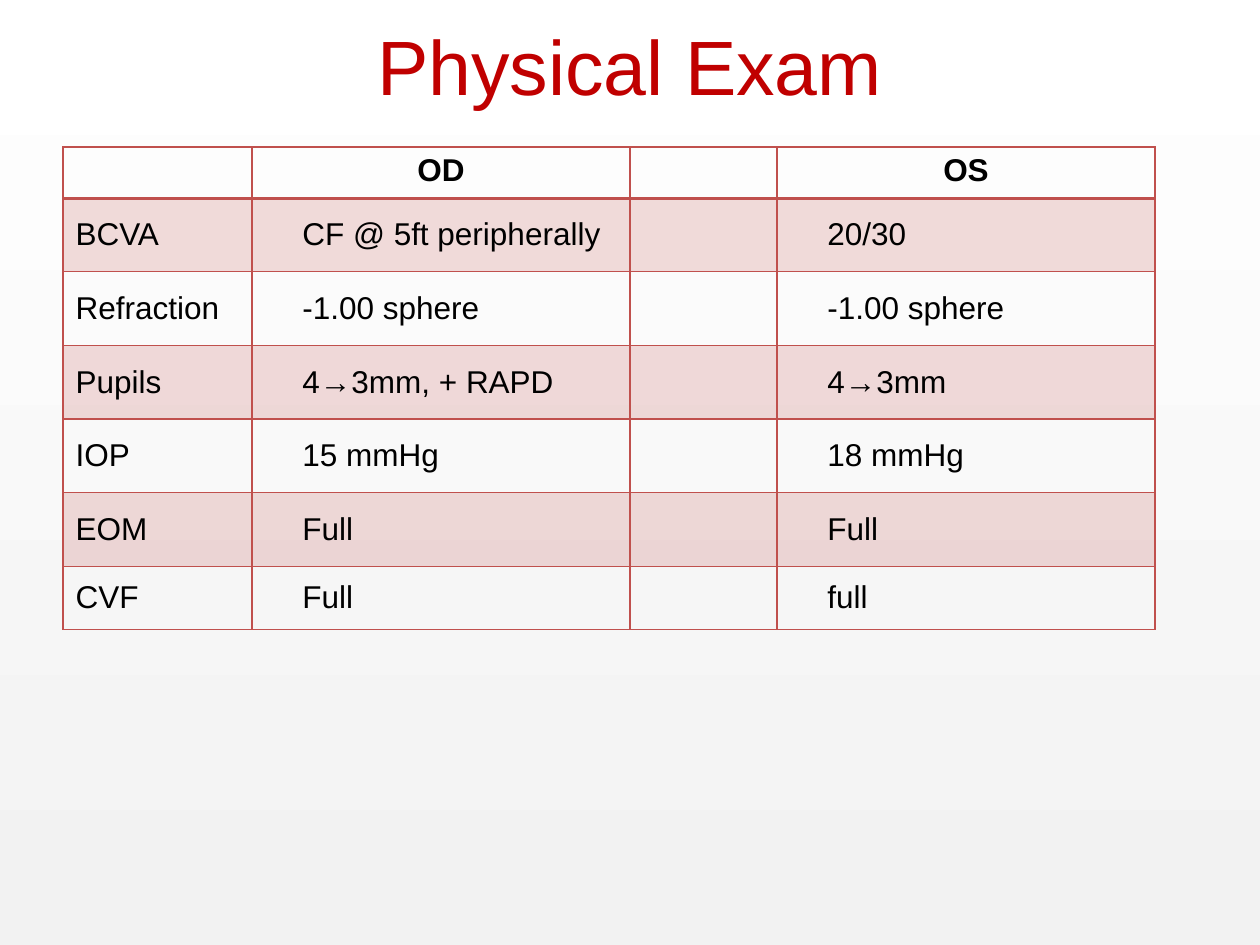
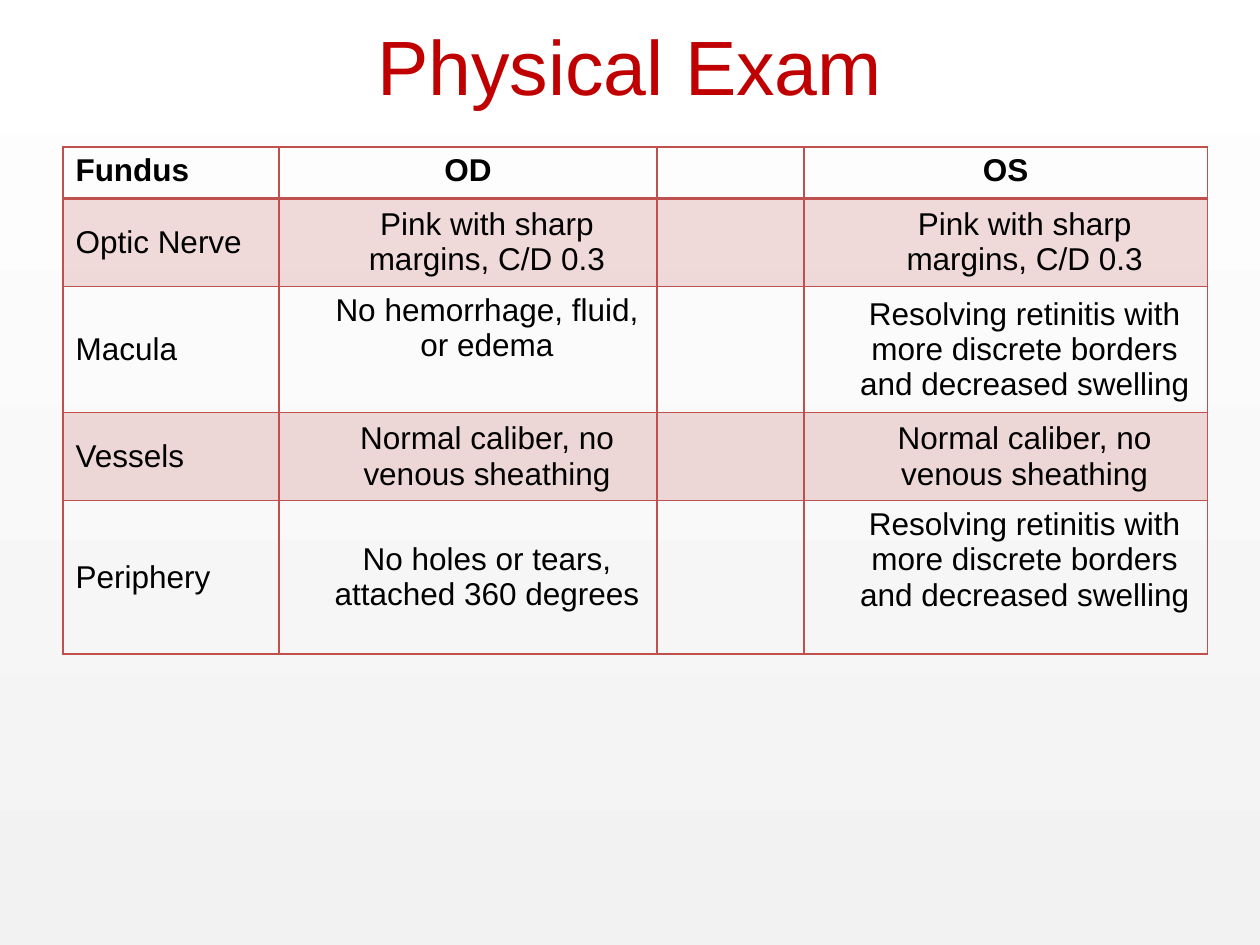
import pptx
import pptx.util
import pptx.dml.color
import pptx.enum.shapes
import pptx.enum.text
from dataclasses import dataclass
from lxml import etree
from pptx.oxml.ns import qn

Pt = pptx.util.Pt
RGB = pptx.dml.color.RGBColor.from_string
ALIGN = pptx.enum.text.PP_ALIGN
ANCHOR = pptx.enum.text.MSO_ANCHOR


@dataclass(frozen=True)
class Theme:
    font: str = "Arial"
    title: str = "C00000"
    text: str = "000000"
    accent: str = "C0504D"
    back_low: str = "F2F2F2"
    back_high: str = "FFFFFF"
    band_opacity: int = 20
    title_size: int = 44
    table_size: int = 18
    line: int = 1
    header_line: int = 2


class Deck:
    def __init__(self, theme):
        self.theme = theme
        self.prs = pptx.Presentation()
        self.prs.slide_width, self.prs.slide_height = Pt(720), Pt(540)
        self.s = None

    def slide(self, title):
        self.s = self.prs.slides.add_slide(self.prs.slide_layouts[6])
        self.backdrop()
        self.title(title)

    def backdrop(self):
        sp = self.s.shapes.add_shape(
            pptx.enum.shapes.MSO_SHAPE.RECTANGLE, 0, 0,
            self.prs.slide_width, self.prs.slide_height)
        sp.shadow.inherit = False
        sp.line.fill.background()
        sp.fill.gradient()
        sp.fill.gradient_angle = 90
        colors = self.theme.back_low, self.theme.back_high
        for stop, color in zip(sp.fill.gradient_stops, colors):
            stop.color.rgb = RGB(color)

    def add_text(self, tf, text, size, color, align, bold=False):
        p = tf.paragraphs[0]
        p.alignment = align
        r = p.add_run()
        r.text = text
        r.font.name, r.font.size, r.font.bold = self.theme.font, Pt(size), bold
        r.font.color.rgb = RGB(color)

    def title(self, text):
        tf = self.s.shapes.add_textbox(Pt(36), Pt(-8), Pt(648), Pt(90)).text_frame
        tf.word_wrap = True
        tf.vertical_anchor = ANCHOR.MIDDLE
        self.add_text(tf, text, self.theme.title_size, self.theme.title, ALIGN.CENTER)

    def borders(self, cell, top, bottom):
        """Insert the four edges ahead of the fill, as the schema requires."""
        widths = {"lnL": self.theme.line, "lnR": self.theme.line,
                  "lnT": top, "lnB": bottom}
        tcPr = cell._tc.get_or_add_tcPr()
        for i, (edge, width) in enumerate(widths.items()):
            ln = etree.Element(qn(f"a:{edge}"), w=str(Pt(width)))
            fill = etree.SubElement(ln, qn("a:solidFill"))
            etree.SubElement(fill, qn("a:srgbClr"), val=self.theme.accent)
            tcPr.insert(i, ln)

    def band(self, cell):
        cell.fill.solid()
        cell.fill.fore_color.rgb = RGB(self.theme.accent)
        color = cell._tc.tcPr.find(f".//{qn('a:srgbClr')}")
        etree.SubElement(color, qn("a:alpha"), val=str(self.theme.band_opacity * 1000))

    def exam_table(self, rows, widths, heights, finding_align, top_cells=()):
        """Draw a header row and banded findings; top_cells are top-anchored."""
        th = self.theme
        table = self.s.shapes.add_table(
            len(rows), len(widths), Pt(36), Pt(84),
            Pt(sum(widths)), Pt(sum(heights))).table
        table.first_row = table.horz_banding = False
        for column, width in zip(table.columns, widths):
            column.width = Pt(width)
        for row, height in zip(table.rows, heights):
            row.height = Pt(height)

        for i, (label, od, os_) in enumerate(rows):
            header = i == 0
            for j, text in enumerate((label, od, "", os_)):
                cell = table.cell(i, j)
                if i % 2:
                    self.band(cell)
                else:
                    cell.fill.background()
                self.borders(cell, th.header_line if i == 1 else th.line,
                             th.header_line if header else th.line)
                if not text:
                    continue
                at_top = header or (i, j) in top_cells
                cell.vertical_anchor = ANCHOR.TOP if at_top else ANCHOR.MIDDLE
                align = ALIGN.LEFT
                if j:
                    align = ALIGN.CENTER if header else finding_align
                    if not header:
                        cell.margin_left = Pt(28.8)
                self.add_text(cell.text_frame, text, th.table_size, th.text, align, header)


def main():
    deck = Deck(Theme())
    title = "Physical Exam"

    deck.slide(title)
    deck.exam_table(
        [("", "OD", "OS"),
         ("BCVA", "CF @ 5ft peripherally", "20/30"),
         ("Refraction", "-1.00 sphere", "-1.00 sphere"),
         ("Pupils", "4→3mm, + RAPD", "4→3mm"),
         ("IOP", "15 mmHg", "18 mmHg"),
         ("EOM", "Full", "Full"),
         ("CVF", "Full", "full")],
        widths=[108, 216, 84, 216],
        heights=[29.2] + [42.1] * 5 + [36],
        finding_align=ALIGN.LEFT)

    deck.slide(title)
    disc = "Pink with sharp margins, C/D 0.3"
    vessels = "Normal caliber, no venous sheathing"
    retinitis = "Resolving retinitis with more discrete borders and decreased swelling"
    deck.exam_table(
        [("Fundus", "OD", "OS"),
         ("Optic Nerve", disc, disc),
         ("Macula", "No hemorrhage, fluid, or edema", retinitis),
         ("Vessels", vessels, vessels),
         ("Periphery", "No holes or tears, attached 360 degrees", retinitis)],
        widths=[123.5, 216, 84, 230.5],
        heights=[29.2, 47.5, 67.5, 47.5, 87.7],
        finding_align=ALIGN.CENTER,
        top_cells={(2, 1), (4, 3)})

    deck.prs.save("out.pptx")


if __name__ == "__main__":
    main()
